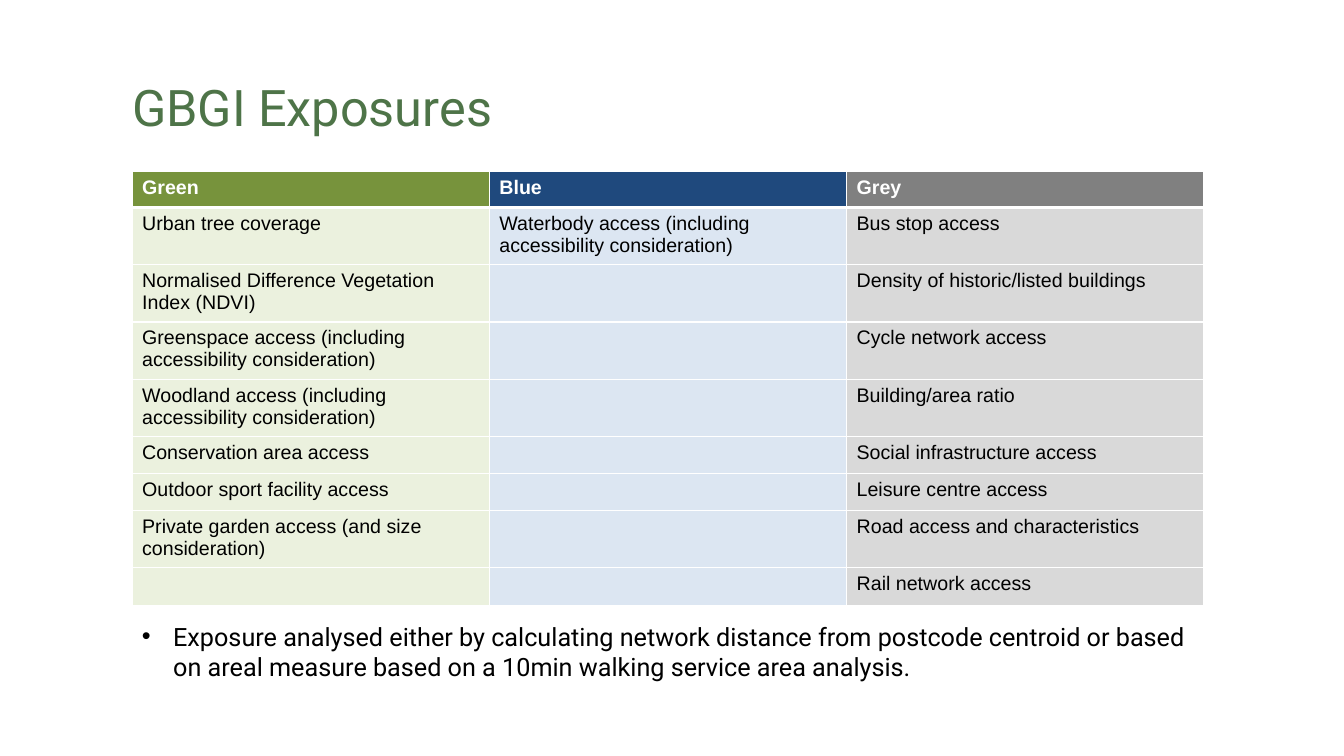
from itertools import zip_longest

from lxml.etree import SubElement as Sub
from pptx import Presentation
from pptx.dml.color import RGBColor as Rgb
from pptx.oxml.ns import qn
from pptx.util import Inches, Pt

INK = {
    "title": "4E7448", "text": "000000", "white": "FFFFFF",
    "green": "77933C", "blue": "1F497D", "grey": "808080",
    "pale green": "EBF1DE", "pale blue": "DCE6F2", "pale grey": "D9D9D9",
}

GROUPS = {
    "Green": [
        "Urban tree coverage",
        "Normalised Difference Vegetation Index (NDVI)",
        "Greenspace access (including accessibility consideration)",
        "Woodland access (including accessibility consideration)",
        "Conservation area access",
        "Outdoor sport facility access",
        "Private garden access (and size consideration)",
    ],
    "Blue": ["Waterbody access (including accessibility consideration)"],
    "Grey": [
        "Bus stop access",
        "Density of historic/listed buildings",
        "Cycle network access",
        "Building/area ratio",
        "Social infrastructure access",
        "Leisure centre access",
        "Road access and characteristics",
        "Rail network access",
    ],
}
NOTE = ("Exposure analysed either by calculating network distance from postcode "
        "centroid or based on areal measure based on a 10min walking service "
        "area analysis.")


def write(para, text, size=14, face="Arial", ink="text", bold=False):
    """Put formatted text in a paragraph; an empty one keeps its size."""
    if not text:
        Sub(para._p, qn("a:endParaRPr"), sz=str(size * 100))
        return
    run = para.add_run()
    run.text = text
    font = run.font
    font.size, font.name, font.bold = Pt(size), face, bold
    font.color.rgb = Rgb.from_string(INK[ink])


class Page:
    """One slide on a grid of 12 columns and 30 rows."""
    left = Inches(1.31)
    col = Inches(10.63) / 12
    row = Inches(0.25)

    def __init__(self, deck):
        self.slide = deck.slides.add_slide(deck.slide_layouts[6])

    def place(self, x, y, wide, high):
        return (round(self.left + x * self.col), round(y * self.row),
                round(wide * self.col), round(high * self.row))

    def text(self, spot, text, inset=True, bullet=False, **style):
        frame = self.slide.shapes.add_textbox(*self.place(*spot)).text_frame
        frame.word_wrap = True
        if not inset:
            frame.margin_left = frame.margin_right = 0
            frame.margin_top = frame.margin_bottom = 0
        para = frame.paragraphs[0]
        if bullet:
            props = para._p.get_or_add_pPr()
            props.set("marL", str(Inches(0.31)))
            props.set("indent", str(-Inches(0.31)))
            Sub(props, qn("a:buFont"), typeface="Arial")
            Sub(props, qn("a:buChar"), char="•")
        write(para, text, **style)

    def edge(self, cell, **widths):
        props = cell._tc.get_or_add_tcPr()
        for side in "LRTB":
            line = Sub(props, qn("a:ln" + side), w=str(Pt(widths.get(side, 1))))
            fill = Sub(line, qn("a:solidFill"))
            Sub(fill, qn("a:srgbClr"), val=INK["white"])

    def table(self, x, y, wide, highs, groups):
        spot = self.place(x, y, wide, sum(highs))
        grid = self.slide.shapes.add_table(len(highs), len(groups), *spot).table
        grid.first_row = grid.horz_banding = False
        for line, high in zip(grid.rows, highs):
            line.height = round(high * self.row)
        lines = [list(groups), *zip_longest(*groups.values(), fillvalue="")]
        for r, line in enumerate(lines):
            head = r == 0
            for c, (name, text) in enumerate(zip(groups, line)):
                cell = grid.cell(r, c)
                self.edge(cell, T=3 if r == 1 else 1, B=3 if head else 1)
                tint = name.lower() if head else "pale " + name.lower()
                cell.fill.solid()
                cell.fill.fore_color.rgb = Rgb.from_string(INK[tint])
                write(cell.text_frame.paragraphs[0], text, bold=head,
                      ink="white" if head else "text")


def main():
    deck = Presentation()
    deck.slide_width, deck.slide_height = Inches(13.33), Inches(7.5)
    page = Page(deck)

    # Title
    page.text((0, 3, 12.27, 4.44), "GBGI Exposures", inset=False,
              size=36, face="Roboto", ink="title")

    # Exposure table: rows with one or two lines of text
    one, two = 1.47, 2.14
    highs = [1.44, two, two, two, two, one, one, two, 1.52]
    page.table(0, 6.8, 12, highs, GROUPS)

    # Note on method
    page.text((0, 24.44, 12, 2.84), NOTE, bullet=True, size=18, face="Roboto")

    deck.save("out.pptx")


if __name__ == "__main__":
    main()
